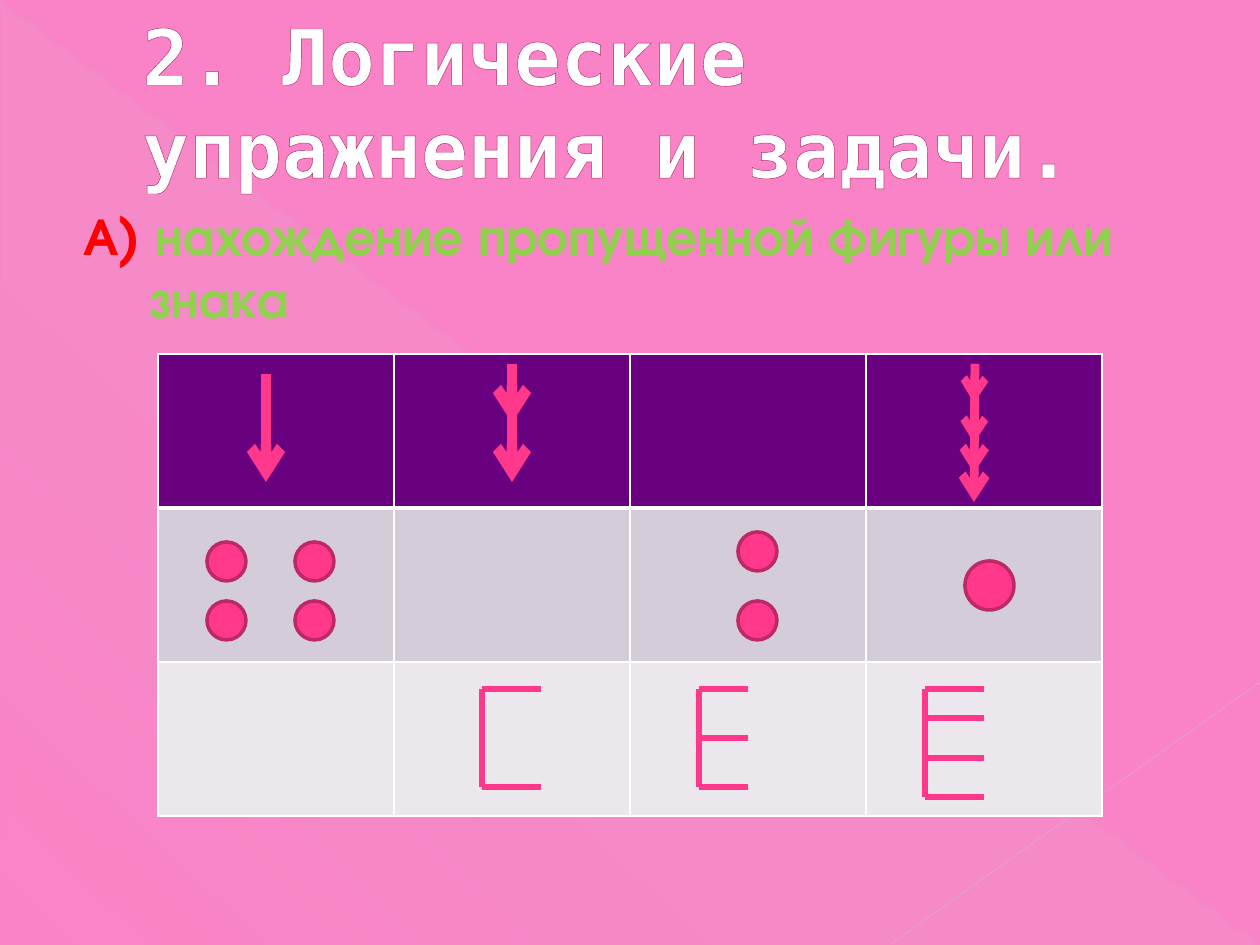
from lxml.etree import SubElement
from pptx import Presentation
from pptx.dml.color import RGBColor
from pptx.enum.shapes import MSO_CONNECTOR, MSO_SHAPE
from pptx.oxml import parse_xml
from pptx.oxml.ns import nsdecls, qn
from pptx.util import Pt

PX = 914400 / 126
COLORS = {
    "background": "FA82C7", "white": "FFFFFF", "outline": "B12761",
    "red": "FF0000", "green": "92D050", "pink": "FF388C", "rim": "BD2968",
    "header": "68007F", "band": "D4CCD8", "plain": "EBE7EC",
    "shade": "D2D2D2", "diagonal": "BFBFBF", "corner": "C6C6C6",
}
RGB = {name: RGBColor.from_string(value) for name, value in COLORS.items()}


def px(*lengths):
    return [round(length * PX) for length in lengths]


def add_line(start, end, color, width, arrow=False, alpha=None):
    line = slide.shapes.add_connector(MSO_CONNECTOR.STRAIGHT, *px(*start, *end))
    line.line.color.rgb = RGB[color]
    line.line.width = Pt(width)
    if alpha:
        tint = line.line._ln.find(".//" + qn("a:srgbClr"))
        SubElement(tint, qn("a:alpha"), val=str(alpha * 1000))
    if arrow:
        SubElement(line.line._ln, qn("a:tailEnd"), type="arrow")
    SubElement(line._element.spPr, qn("a:effectLst"))


prs = Presentation()
prs.slide_width, prs.slide_height = px(1260, 945)
slide = prs.slides.add_slide(prs.slide_layouts[6])
slide.background.fill.solid()
slide.background.fill.fore_color.rgb = RGB["background"]

# Backdrop: faint triangle and two diagonals
triangle = slide.shapes.add_shape(MSO_SHAPE.RIGHT_TRIANGLE, *px(1, 3, 1257, 942))
triangle.shadow.inherit = False
triangle.line.fill.background()
stops = "".join(
    f'<a:gs pos="{pos * 1000}"><a:srgbClr val="{COLORS["shade"]}">'
    f'<a:alpha val="{alpha * 1000}"/></a:srgbClr></a:gs>'
    for pos, alpha in ((0, 10), (70, 8), (100, 1)))
triangle._element.spPr.find(qn("a:prstGeom")).addnext(parse_xml(
    f'<a:gradFill {nsdecls("a")}><a:gsLst>{stops}</a:gsLst>'
    f'<a:lin ang="{133 * 60000}" scaled="0"/></a:gradFill>'))
add_line((0, 1), (1259, 944), "diagonal", 0.39, alpha=35)
add_line((1260, 682), (891, 944), "corner", 0.47, alpha=45)

# Title
title = slide.shapes.add_textbox(*px(130, 8, 1054, 192)).text_frame
title.word_wrap = True
title.margin_top = title.margin_bottom = 0
heading = title.paragraphs[0]
heading.line_spacing = Pt(53)
heading.font.name = "DejaVu Sans Mono"
heading.font.size = Pt(44.1)
heading.font.bold = True
heading.font.color.rgb = RGB["white"]
heading_run = heading.add_run()
heading_run.text = "2. Логические упражнения и задачи."
heading_run._r.get_or_add_rPr().insert(0, parse_xml(
    f'<a:ln {nsdecls("a")} w="{Pt(0.5)}"><a:solidFill>'
    f'<a:srgbClr val="{COLORS["outline"]}"/></a:solidFill></a:ln>'))

# Task
body = slide.shapes.add_textbox(*px(63, 197, 1134, 140)).text_frame
body.word_wrap = True
task = body.paragraphs[0]
task.space_before = Pt(6)
task.font.name = "TeX Gyre Adventor"
task.font.size = Pt(30)
task.font.bold = True
indent, hanging = px(74, -66)
task._p.get_or_add_pPr().set("marL", str(indent))
task._p.get_or_add_pPr().set("indent", str(hanging))
for words, color in (("А) ", "red"),
                     ("нахождение пропущенной фигуры или знака", "green")):
    run = task.add_run()
    run.text = words
    run.font.color.rgb = RGB[color]

# Grid of puzzles
frame = slide.shapes.add_table(3, 4, *px(158, 354, 944, 462))
for row, fill in enumerate(("header", "band", "plain")):
    for col in range(4):
        cell = frame.table.cell(row, col)
        props = cell._tc.get_or_add_tcPr()
        for side in ("lnL", "lnR", "lnT", "lnB"):
            thick = (row, side) in ((0, "lnB"), (1, "lnT"))
            props.append(parse_xml(
                f'<a:{side} {nsdecls("a")} w="{Pt(3 if thick else 1)}"><a:solidFill>'
                f'<a:srgbClr val="{COLORS["white"]}"/></a:solidFill></a:{side}>'))
        cell.fill.solid()
        cell.fill.fore_color.rgb = RGB[fill]

# Row 1: arrows with one, two and four heads
for x1, x2, top, bottom, width in (
        (266, 266, 374, 482, 6.25),
        (512, 512, 374, 482, 6.25), (512, 512, 364, 423, 6.25),
        (975, 974, 364, 502, 5), (975, 974, 374, 473, 4.75),
        (975, 974, 384, 443, 4.5), (975, 974, 364, 403, 4.5)):
    add_line((x1, top), (x2, bottom), "pink", width, arrow=True)

# Row 2: four, two and one dots
for left, top, size in ((207, 542, 39), (295, 542, 39), (295, 601, 39),
                        (207, 601, 39), (738, 532, 39), (738, 601, 39),
                        (965, 561, 49)):
    dot = slide.shapes.add_shape(MSO_SHAPE.FLOWCHART_CONNECTOR,
                                 *px(left, top, size, size))
    dot.shadow.inherit = False
    dot.fill.solid()
    dot.fill.fore_color.rgb = RGB["pink"]
    dot.line.color.rgb = RGB["rim"]
    dot.line.width = Pt(2)

# Row 3: combs with two, three and four bars
for left, right, bars in ((482, 541, (689, 787)),
                          (699, 748, (689, 738, 787)),
                          (925, 984, (689, 718, 758, 797))):
    add_line((left, bars[0]), (left, bars[-1]), "pink", 3.25)
    for y in bars:
        add_line((left, y), (right, y), "pink", 3.25)

prs.save("out.pptx")
